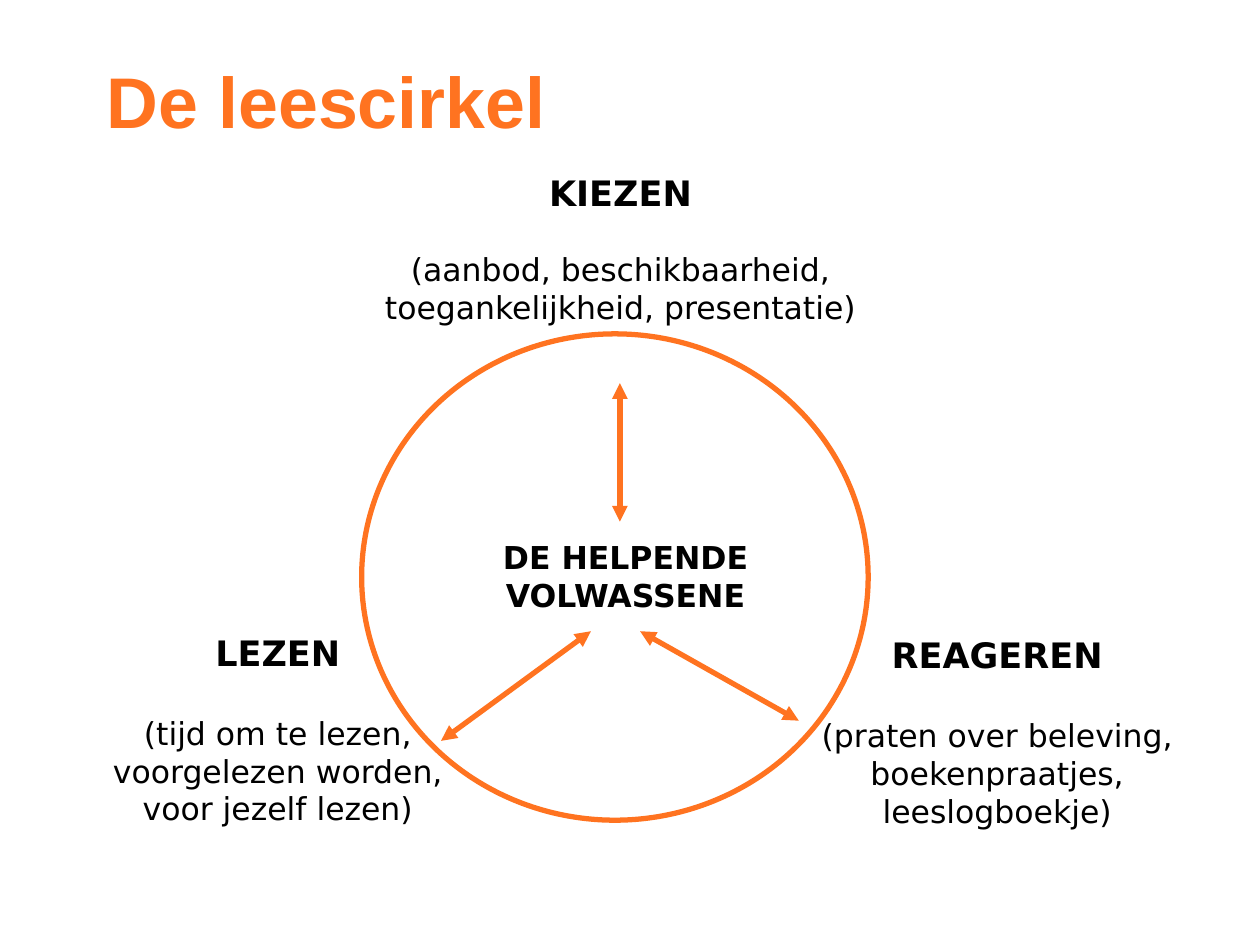
from lxml import etree
from pptx import Presentation
from pptx import util as u
from pptx.dml.color import RGBColor
from pptx.enum import shapes, text
from pptx.oxml.ns import qn

THEME = {
    "orange": RGBColor(0xFF, 0x73, 0x20),
    "black": RGBColor(0, 0, 0),
    "title_font": "Arial",
    "body_font": "DejaVu Sans",
    "title": 41,
    "heading": 20,
    "body": 18,
    "line": u.Pt(3),
}

presentation = Presentation()
presentation.slide_width, presentation.slide_height = u.Inches(10), u.Inches(7.5)
slide = presentation.slides.add_slide(presentation.slide_layouts[6])

# Grid of 100 columns by 75 rows
COLUMN = presentation.slide_width / 100
ROW = presentation.slide_height / 75


def grid(*cells):
    """Turn alternating column and row positions into slide lengths."""
    return [round(cell * (ROW if index % 2 else COLUMN)) for index, cell in enumerate(cells)]


def add_text(place, lines, size=THEME["body"], bold=False, font=THEME["body_font"],
             color=THEME["black"], align=text.PP_ALIGN.CENTER,
             anchor=text.MSO_ANCHOR.TOP, heading=None, gap=0):
    """Add a text box; a heading stands above the lines, with a gap in points."""
    frame = slide.shapes.add_textbox(*grid(*place)).text_frame
    frame.word_wrap = True
    frame.vertical_anchor = anchor
    rows = [(line, size, bold) for line in lines]
    if heading:
        rows.insert(0, (heading, THEME["heading"], True))
    for index, (line, points, weight) in enumerate(rows):
        paragraph = frame.paragraphs[0] if index == 0 else frame.add_paragraph()
        paragraph.alignment = align
        if heading and index == 1:
            paragraph.space_before = u.Pt(gap)
        run = paragraph.add_run()
        run.text = line
        run.font.name, run.font.size, run.font.bold = font, u.Pt(points), weight
        run.font.color.rgb = color


# Title
add_text((7.5, 3.3, 85, 9.2), ["De leescirkel"], size=THEME["title"], bold=True,
         font=THEME["title_font"], color=THEME["orange"],
         align=text.PP_ALIGN.LEFT, anchor=text.MSO_ANCHOR.MIDDLE)

# Reading circle
circle = slide.shapes.add_shape(shapes.MSO_SHAPE.OVAL, *grid(28.7, 26.5, 40.2, 38.6))
circle.shadow.inherit = False
circle.fill.background()
circle.line.color.rgb = THEME["orange"]
circle.line.width = THEME["line"]

# Three steps around the circle
steps = [
    ((0, 49.6, 44.1, 16.7), "LEZEN", 23.3,
     ["(tijd om te lezen,", "voorgelezen worden,", "voor jezelf lezen)"]),
    ((27.2, 13.1, 44.1, 13.4), "KIEZEN", 21,
     ["(aanbod, beschikbaarheid, toegankelijkheid, presentatie)"]),
    ((58.3, 49.8, 41.7, 16.7), "REAGEREN", 23.3,
     ["(praten over beleving,", "boekenpraatjes,", "leeslogboekje)"]),
]
for place, heading, gap, lines in steps:
    add_text(place, lines, heading=heading, gap=gap)

# Helping adult in the centre
add_text((34.3, 42.2, 30.7, 7), ["DE HELPENDE", "VOLWASSENE"], bold=True)

# Two-way arrows between the centre and the steps
arrows = [(49.2, 30.4, 49.2, 41.4), (46.9, 50.1, 35, 58.8), (50.8, 50.1, 63.4, 57.2)]
for ends in arrows:
    arrow = slide.shapes.add_connector(shapes.MSO_CONNECTOR.STRAIGHT, *grid(*ends))
    arrow.line.color.rgb = THEME["orange"]
    arrow.line.width = THEME["line"]
    outline = arrow.line._get_or_add_ln()
    for tip in ("a:headEnd", "a:tailEnd"):
        etree.SubElement(outline, qn(tip), type="triangle")
    etree.SubElement(arrow._element.spPr, qn("a:effectLst"))

presentation.save("out.pptx")
